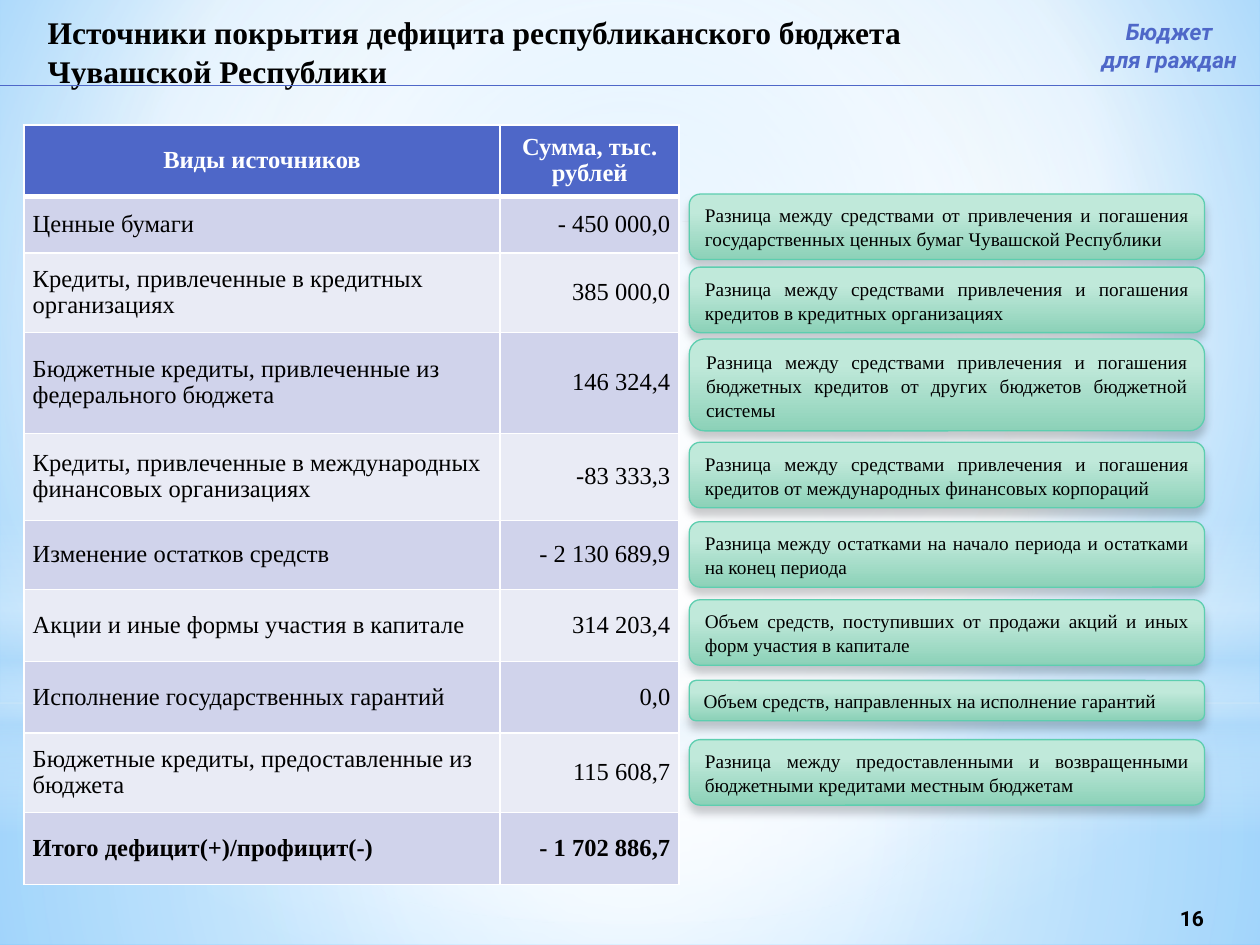
from pptx import Presentation, util as u
from pptx.dml.color import RGBColor
from pptx.enum import shapes, text
from pptx.oxml import parse_xml
from pptx.oxml.ns import nsdecls, qn

BLUE = RGBColor(0x4E, 0x67, 0xC8)
BLACK = RGBColor(0, 0, 0)
WHITE = RGBColor(0xFF, 0xFF, 0xFF)
BAND_DARK = RGBColor(0xD0, 0xD3, 0xEB)
BAND_LIGHT = RGBColor(0xE9, 0xEB, 0xF5)
SKY = RGBColor(0xB4, 0xDC, 0xFA)
SKY_MID = RGBColor(0x9E, 0xD5, 0xFF)
SKY_DEEP = RGBColor(0x5B, 0xB9, 0xFF)
MINT_LIGHT = RGBColor(0xC0, 0xE9, 0xDA)
MINT_DARK = RGBColor(0x8C, 0xD1, 0xB8)
MINT_LINE = RGBColor(0x5D, 0xCE, 0xAF)
SERIF, SANS = "Times New Roman", "Roboto"
LEFT, CENTER, RIGHT, JUSTIFY = (
    text.PP_ALIGN.LEFT, text.PP_ALIGN.CENTER, text.PP_ALIGN.RIGHT, text.PP_ALIGN.JUSTIFY)
MIDDLE = text.MSO_ANCHOR.MIDDLE
RECTANGLE, OVAL = shapes.MSO_SHAPE.RECTANGLE, shapes.MSO_SHAPE.OVAL
CENTERED = (50, 50, 50, 50)

BACKGROUND_STOPS = [(0, SKY_MID, 100), (60, WHITE, 100), (100, SKY_DEEP, 100)]
BACKDROPS = [
    (RECTANGLE, (0, 5.58, 10, 1.92),
     [(0, WHITE, 91), (37, WHITE, 76), (100, SKY, 79)], CENTERED),
    (RECTANGLE, (0, 0, 10, 5.58),
     [(0, WHITE, 89), (48, WHITE, 62), (100, SKY, 79)], CENTERED),
    (RECTANGLE, (0, 4.12, 10, 2.5),
     [(0, WHITE, 0), (29, WHITE, 30), (45, SKY, 40), (55, WHITE, 26),
      (65, SKY, 60), (100, WHITE, 0)], None),
    (OVAL, (0, 1.75, 10, 5.58), [(0, WHITE, 100), (56, WHITE, 0)], CENTERED),
]
SOURCES = [
    (0.57, "Виды источников", "Сумма, тыс. рублей"),
    (0.45, "Ценные бумаги", "- 450 000,0"),
    (0.63, "Кредиты, привлеченные в кредитных организациях", "385 000,0"),
    (0.8, "Бюджетные кредиты, привлеченные из федерального бюджета", "146 324,4"),
    (0.69, "Кредиты, привлеченные в международных финансовых организациях", "-83 333,3"),
    (0.55, "Изменение остатков средств", "- 2 130 689,9"),
    (0.57, "Акции и иные формы участия в капитале", "314 203,4"),
    (0.57, "Исполнение государственных гарантий", "0,0"),
    (0.63, "Бюджетные кредиты, предоставленные из бюджета", "115 608,7"),
    (0.57, "Итого дефицит(+)/профицит(-)", "- 1 702 886,7"),
]
COLUMN_WIDTHS = (3.78, 1.42)
NOTES = [
    (1.54, 0.52, "Разница между средствами от привлечения и погашения государственных ценных бумаг Чувашской Республики"),
    (2.12, 0.52, "Разница между средствами привлечения и погашения кредитов в кредитных организациях"),
    (2.69, 0.73, "Разница между средствами привлечения и погашения бюджетных кредитов от других бюджетов бюджетной системы"),
    (3.51, 0.52, "Разница между средствами привлечения и погашения кредитов от международных финансовых корпораций"),
    (4.14, 0.52, "Разница между остатками на начало периода и остатками на конец периода"),
    (4.76, 0.52, "Объем средств, поступивших от продажи акций и иных форм участия в капитале"),
    (5.4, 0.32, "Объем средств, направленных на исполнение гарантий"),
    (5.87, 0.52, "Разница между предоставленными и возвращенными бюджетными кредитами местным бюджетам"),
]


def inches(values):
    return [u.Inches(value) for value in values]


def write(frame, content, size=14, font=SERIF, color=BLACK, bold=False,
          italic=False, align=LEFT, spacing=1.04):
    for index, line in enumerate(content.split("\n")):
        paragraph = frame.paragraphs[0] if index == 0 else frame.add_paragraph()
        paragraph.alignment = align
        paragraph.line_spacing = spacing
        run = paragraph.add_run()
        run.text = line
        run.font.size, run.font.name = u.Pt(size), font
        run.font.bold, run.font.italic = bold, italic
        run.font.color.rgb = color


def set_gradient(fill, element, stops, focus=None):
    fill.gradient()
    gradient = element.find(".//" + qn("a:gradFill"))
    stop_xml = "".join(
        f'<a:gs pos="{position * 1000}"><a:srgbClr val="{color}">'
        f'<a:alpha val="{alpha * 1000}"/></a:srgbClr></a:gs>'
        for position, color, alpha in stops)
    direction = '<a:lin ang="5400000" scaled="0"/>'
    if focus:
        sides = " ".join(f'{side}="{value * 1000}"' for side, value in zip("ltrb", focus))
        direction = f'<a:path path="circle"><a:fillToRect {sides}/></a:path>'
    gradient.getparent().replace(gradient, parse_xml(
        f'<a:gradFill {nsdecls("a")} rotWithShape="1">'
        f'<a:gsLst>{stop_xml}</a:gsLst>{direction}</a:gradFill>'))


def add_gradient_shape(slide, kind, box, stops, focus=None):
    shape = slide.shapes.add_shape(kind, *inches(box))
    shape.shadow.inherit = False
    set_gradient(shape.fill, shape._element, stops, focus)
    shape.line.fill.background()
    return shape


def add_note(slide, top, height, content):
    shape = add_gradient_shape(
        slide, shapes.MSO_SHAPE.ROUNDED_RECTANGLE, (5.47, top, 4.09, height),
        [(28, MINT_LIGHT, 100), (100, MINT_DARK, 100)])
    shape.line.color.rgb = MINT_LINE
    shape.line.width = u.Pt(0.75)
    shape._element.spPr.find(qn("a:effectLst")).append(parse_xml(
        f'<a:outerShdw {nsdecls("a")} blurRad="{u.Pt(5)}" dist="{u.Pt(4)}" dir="5400000" '
        'rotWithShape="0"><a:srgbClr val="000000"><a:alpha val="20000"/></a:srgbClr></a:outerShdw>'))
    shape.text_frame.word_wrap = True
    shape.text_frame.vertical_anchor = MIDDLE
    write(shape.text_frame, content, size=11, align=JUSTIFY)


def add_borders(cell, top, bottom):
    properties = cell._tc.get_or_add_tcPr()
    for side, width in (("L", 1), ("R", 1), ("T", top), ("B", bottom)):
        properties.append(parse_xml(
            f'<a:ln{side} {nsdecls("a")} w="{u.Pt(width)}"><a:solidFill>'
            f'<a:srgbClr val="{WHITE}"/></a:solidFill></a:ln{side}>'))


def add_sources_table(slide):
    total_height = sum(row[0] for row in SOURCES)
    table = slide.shapes.add_table(
        len(SOURCES), 2, *inches((0.19, 0.99, sum(COLUMN_WIDTHS), total_height))).table
    for column, width in zip(table.columns, COLUMN_WIDTHS):
        column.width = u.Inches(width)
    for row, (height, *values) in enumerate(SOURCES):
        header = row == 0
        table.rows[row].height = u.Inches(height)
        for column, content in enumerate(values):
            cell = table.cell(row, column)
            add_borders(cell, 3 if row == 1 else 1, 3 if header else 1)
            cell.fill.solid()
            cell.fill.fore_color.rgb = BLUE if header else (BAND_LIGHT, BAND_DARK)[row % 2]
            cell.vertical_anchor = MIDDLE
            cell.margin_left = cell.margin_right = u.Inches(0.07)
            cell.margin_top = cell.margin_bottom = u.Inches(0.05)
            write(cell.text_frame, content, color=WHITE if header else BLACK,
                  bold=row in (0, len(SOURCES) - 1), spacing=0.96,
                  align=CENTER if header else (LEFT, RIGHT)[column])


def add_label(slide, box, content, wrap=True, anchor=text.MSO_ANCHOR.TOP, **style):
    frame = slide.shapes.add_textbox(*inches(box)).text_frame
    frame.word_wrap = wrap
    frame.vertical_anchor = anchor
    write(frame, content, **style)


def main():
    presentation = Presentation()
    presentation.slide_width, presentation.slide_height = inches((10, 7.5))
    slide = presentation.slides.add_slide(presentation.slide_layouts[6])
    set_gradient(slide.background.fill, slide._element, BACKGROUND_STOPS, (20, 10, 20, 60))
    for backdrop in BACKDROPS:
        add_gradient_shape(slide, *backdrop)
    add_sources_table(slide)
    for note in NOTES:
        add_note(slide, *note)
    add_label(slide, (8.91, 7.08, 1.1, 0.4), "16", anchor=MIDDLE,
              size=12, font=SANS, bold=True, align=CENTER)
    add_label(slide, (0.28, 0.04, 7.79, 0.6),
              "Источники покрытия дефицита республиканского бюджета Чувашской Республики",
              size=18, bold=True)
    rule = slide.shapes.add_connector(
        shapes.MSO_CONNECTOR.STRAIGHT, *inches((0, 0.68, 10, 0.68)))
    rule.line.color.rgb = BLUE
    rule.line.width = u.Pt(0.75)
    rule._element.spPr.append(parse_xml(f'<a:effectLst {nsdecls("a")}/>'))
    add_label(slide, (8.61, 0.08, 1.34, 0.54), "Бюджет\nдля граждан", wrap=False,
              size=13, font=SANS, color=BLUE, bold=True, italic=True, align=CENTER)
    presentation.save("out.pptx")


if __name__ == "__main__":
    main()
